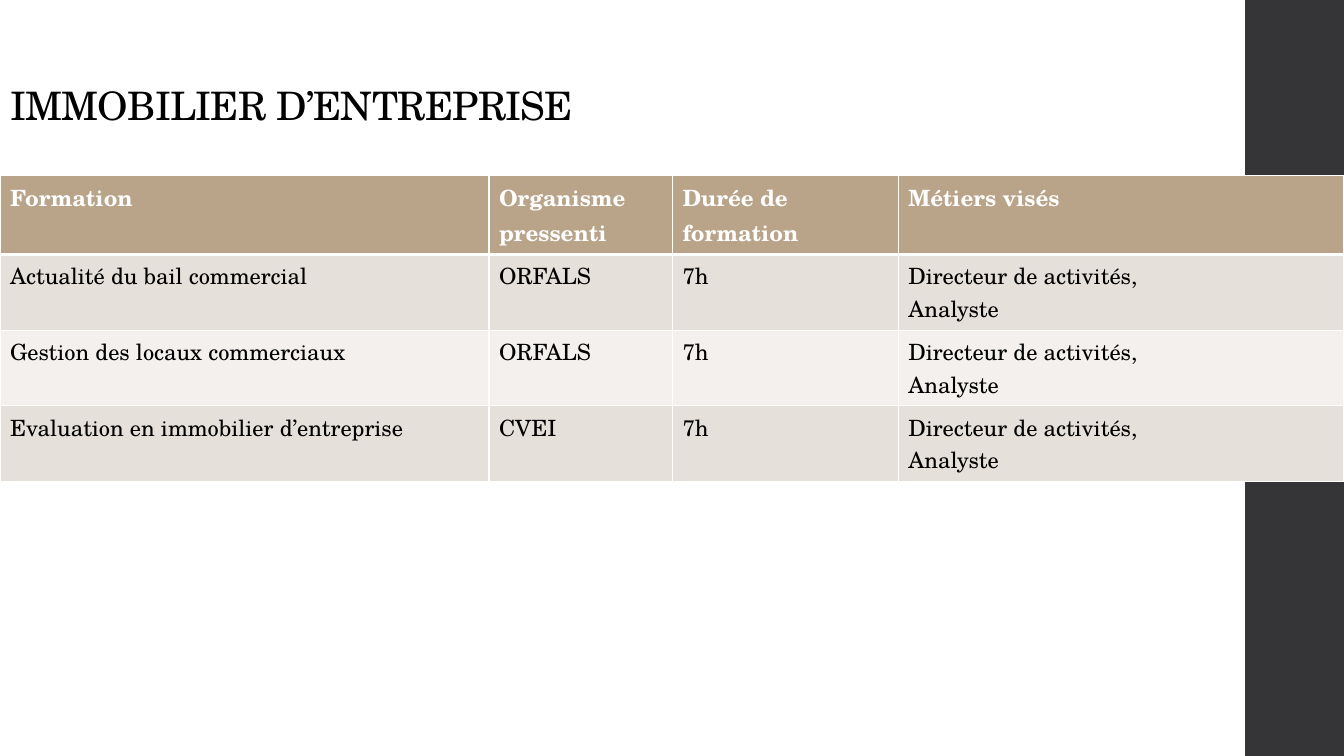
from dataclasses import dataclass

from lxml import etree
from pptx import Presentation
from pptx.dml.color import RGBColor
from pptx.enum.shapes import MSO_SHAPE
from pptx.enum.text import MSO_ANCHOR, MSO_AUTO_SIZE, PP_ALIGN
from pptx.oxml.ns import qn
from pptx.slide import Slide
from pptx.table import Table, _Cell
from pptx.text.text import _Paragraph
from pptx.util import Inches, Pt

RECTANGLE = MSO_SHAPE.RECTANGLE
BOTTOM = MSO_ANCHOR.BOTTOM
LEFT = PP_ALIGN.LEFT
NO_AUTOFIT = MSO_AUTO_SIZE.NONE

FONT = "TeX Gyre Schola"
BLACK = RGBColor(0x00, 0x00, 0x00)
WHITE = RGBColor(0xFF, 0xFF, 0xFF)
CHARCOAL = RGBColor(0x35, 0x35, 0x37)
TAN = RGBColor(0xB9, 0xA4, 0x89)
BANDS = (RGBColor(0xE6, 0xE0, 0xDA), RGBColor(0xF3, 0xF0, 0xED))

TITLE_ONLY = 5
THIN, THICK = Pt(1), Pt(3)
HEADER_HEIGHT, ROW_HEIGHT = 0.78, 0.75


@dataclass(frozen=True)
class Column:
    heading: str
    width: float


@dataclass(frozen=True)
class Course:
    name: str
    provider: str
    duration: str = "7h"
    jobs: tuple[str, ...] = ("Directeur de activités,", "Analyste")

    def cells(self) -> list[tuple[str, ...]]:
        return [(self.name,), (self.provider,), (self.duration,), self.jobs]


COLUMNS = [
    Column("Formation", 4.85),
    Column("Organisme pressenti", 1.82),
    Column("Durée de formation", 2.24),
    Column("Métiers visés", 4.42),
]
COURSES = [
    Course("Actualité du bail commercial", "ORFALS"),
    Course("Gestion des locaux commerciaux", "ORFALS"),
    Course("Evaluation en immobilier d’entreprise", "CVEI"),
]


def add_run(p: _Paragraph, text: str, size: float, color: RGBColor, bold: bool = False):
    r = p.add_run()
    r.text = text
    r.font.name = FONT
    r.font.size = Pt(size)
    r.font.bold = bold
    r.font.color.rgb = color
    return r


def set_borders(cell: _Cell, top: int, bottom: int) -> None:
    tcPr = cell._tc.get_or_add_tcPr()
    widths = {"a:lnL": THIN, "a:lnR": THIN, "a:lnT": top, "a:lnB": bottom}
    for tag, width in widths.items():
        ln = etree.SubElement(tcPr, qn(tag), w=str(width))
        fill = etree.SubElement(ln, qn("a:solidFill"))
        etree.SubElement(fill, qn("a:srgbClr"), val=str(WHITE))


def fill_row(table: Table, row: int, texts: list[tuple[str, ...]]) -> None:
    header = row == 0
    for cell, lines in zip(table.rows[row].cells, texts):
        set_borders(cell, THICK if row == 1 else THIN, THICK if header else THIN)
        cell.fill.solid()
        cell.fill.fore_color.rgb = TAN if header else BANDS[(row - 1) % 2]
        tf = cell.text_frame
        for i, line in enumerate(lines):
            p = tf.add_paragraph() if i else tf.paragraphs[0]
            add_run(p, line, 16, WHITE if header else BLACK, bold=header)


def add_side_band(s: Slide) -> None:
    sp = s.shapes.add_shape(RECTANGLE, Inches(12.35), 0, Inches(1), Inches(7.5))
    sp.shadow.inherit = False
    sp.fill.solid()
    sp.fill.fore_color.rgb = CHARCOAL
    sp.line.fill.background()


def add_title(s: Slide, text: str) -> None:
    sp = s.shapes.title
    sp.left, sp.top = Inches(0), Inches(0.18)
    sp.width, sp.height = Inches(10.5), Inches(1.15)
    tf = sp.text_frame
    tf.auto_size = NO_AUTOFIT
    tf.vertical_anchor = BOTTOM
    p = tf.paragraphs[0]
    p.alignment = LEFT
    p.line_spacing = 0.9
    r = add_run(p, text, 28, BLACK)
    r.font._element.set("spc", "-50")


def add_course_table(s: Slide) -> None:
    width = sum(c.width for c in COLUMNS)
    height = HEADER_HEIGHT + ROW_HEIGHT * len(COURSES)
    table = s.shapes.add_table(
        len(COURSES) + 1, len(COLUMNS),
        Inches(0), Inches(1.74), Inches(width), Inches(height),
    ).table
    table.horz_banding = False
    for column, spec_ in zip(table.columns, COLUMNS):
        column.width = Inches(spec_.width)
    for i, row in enumerate(table.rows):
        row.height = Inches(ROW_HEIGHT if i else HEADER_HEIGHT)

    fill_row(table, 0, [(c.heading,) for c in COLUMNS])
    for i, course in enumerate(COURSES, start=1):
        fill_row(table, i, course.cells())


def main() -> None:
    prs = Presentation()
    prs.slide_width, prs.slide_height = Inches(13.33), Inches(7.5)
    s = prs.slides.add_slide(prs.slide_layouts[TITLE_ONLY])

    # Background and side band
    s.background.fill.solid()
    s.background.fill.fore_color.rgb = WHITE
    add_side_band(s)

    # Title and training table
    add_title(s, "IMMOBILIER D’ENTREPRISE")
    add_course_table(s)

    prs.save("out.pptx")


if __name__ == "__main__":
    main()
